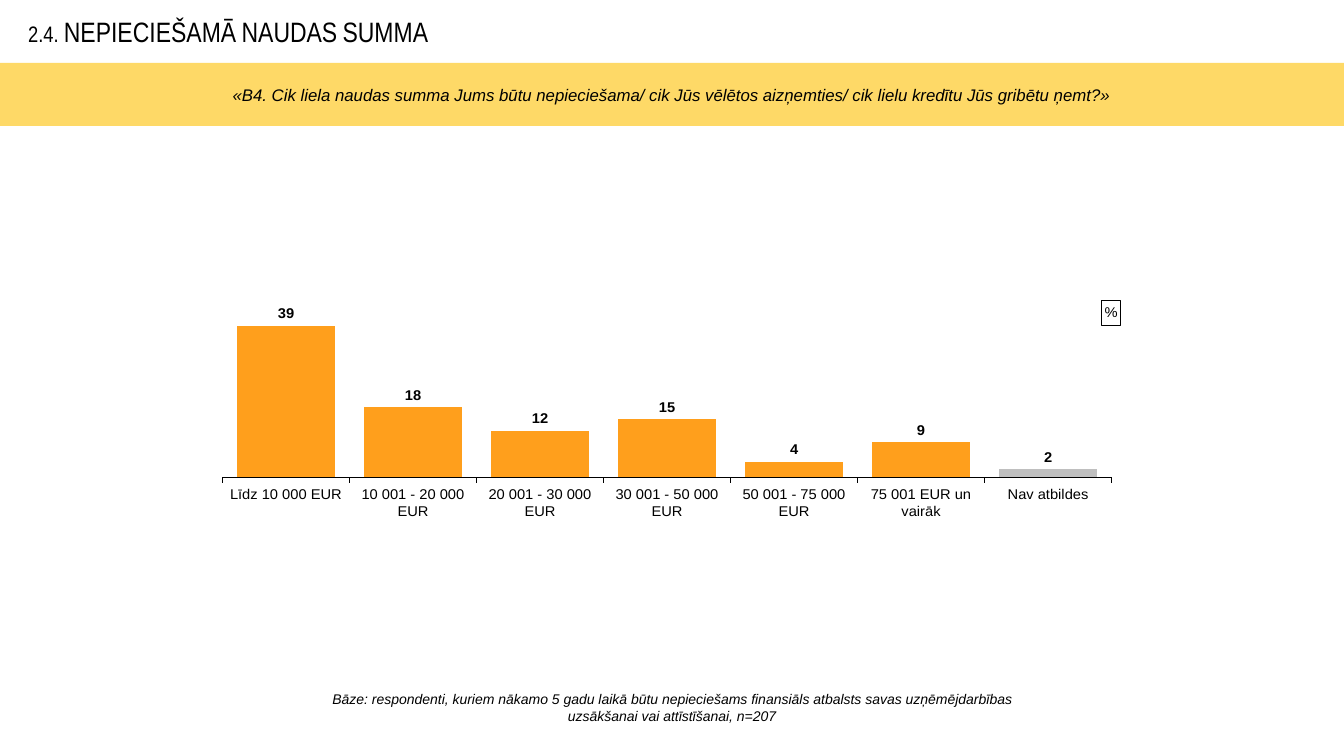
from dataclasses import dataclass

from lxml import etree
from pptx import Presentation
from pptx import util as u
from pptx.chart.data import CategoryChartData
from pptx.dml.color import RGBColor
from pptx.enum import chart as ch
from pptx.enum import shapes, text
from pptx.oxml import parse_xml
from pptx.oxml.ns import nsdecls

TITLE = "2.4. NEPIECIEŠAMĀ NAUDAS SUMMA"
ASK = ("«B4. Cik liela naudas summa Jums būtu nepieciešama/ cik Jūs vēlētos "
       "aizņemties/ cik lielu kredītu Jūs gribētu ņemt?»")
BASE = [
    "Bāze: respondenti, kuriem nākamo 5 gadu laikā būtu nepieciešams "
    "finansiāls atbalsts savas uzņēmējdarbības",
    "uzsākšanai vai attīstīšanai, n=207",
]
UNIT = "%"
SUMS = {
    "Līdz 10 000 EUR": 39,
    "10 001 - 20 000 EUR": 18,
    "20 001 - 30 000 EUR": 12,
    "30 001 - 50 000 EUR": 15,
    "50 001 - 75 000 EUR": 4,
    "75 001 EUR un vairāk": 9,
    "Nav atbildes": 2,
}


@dataclass(frozen=True)
class Theme:
    ink: str = "000000"
    band: str = "FED967"
    bar: str = "FF9F1C"
    none: str = "BFBFBF"
    face: str = "Arial"
    head: str = "Arial Narrow"
    title: float = 20
    ask: float = 12
    label: float = 10.5
    base: float = 10
    small: float = 9


T = Theme()
WIDE, HIGH = 13.33, 7.5
ROW = HIGH / 12
SIDE = WIDE / 8


def box(x, y, w, h):
    return [u.Inches(v) for v in (x, y, w, h)]


def style(font, size, face=T.face, bold=False, italic=False):
    font.size, font.name = u.Pt(size), face
    font.bold, font.italic = bold, italic
    font.color.rgb = RGBColor.from_string(T.ink)


def paint(fill, color):
    fill.solid()
    fill.fore_color.rgb = RGBColor.from_string(color)


def write(shape, lines, size, align, **look):
    frame = shape.text_frame
    frame.text = "\n".join(lines)
    frame.word_wrap = True
    frame.auto_size = text.MSO_AUTO_SIZE.NONE
    frame.vertical_anchor = text.MSO_ANCHOR.MIDDLE
    for para in frame.paragraphs:
        para.alignment = align
        style(para.font, size, **look)


def place(node, x, y, w=None, h=None):
    old = node.find("{*}layout")
    if old is not None:
        node.remove(old)
    spots = {"xMode": "edge", "yMode": "edge", "x": x, "y": y}
    if w:
        spots = {"layoutTarget": "inner", **spots, "w": w, "h": h}
    inner = "".join(f'<c:{k} val="{v}"/>' for k, v in spots.items())
    return parse_xml(f'<c:layout {nsdecls("c")}><c:manualLayout>{inner}'
                     "</c:manualLayout></c:layout>")


def draw_chart(slide):
    data = CategoryChartData(number_format="0")
    data.categories = list(SUMS)
    data.add_series("Series 1", list(SUMS.values()))
    chart = slide.shapes.add_chart(
        ch.XL_CHART_TYPE.COLUMN_CLUSTERED, *box(1.82, 2.96, 9.69, 2.19), data).chart
    style(chart.font, T.small)
    chart.has_legend = False

    chart.has_title = True
    title = chart.chart_title
    title.text_frame.text = UNIT
    style(title.text_frame.paragraphs[0].font, T.label)
    title.include_in_layout = False
    edge = title.format.line
    paint(edge.fill, T.ink)
    edge.width = u.Pt(0.75)
    node = title._element
    spot = place(node, 0.94, 0.01)
    node.find("{*}tx").addnext(spot)

    area = chart._chartSpace.chart.plotArea
    area.insert(0, place(area, 0.04, 0.02, 0.91, 0.82))

    cats, vals = chart.category_axis, chart.value_axis
    cats.major_tick_mark = ch.XL_TICK_MARK.OUTSIDE
    style(cats.tick_labels.font, T.label)
    paint(cats.format.line.fill, T.ink)
    cats.format.line.width = u.Pt(0.25)
    vals.minimum_scale, vals.maximum_scale = 0, 45
    vals.has_major_gridlines = False
    vals.visible = False

    plot = chart.plots[0]
    plot.gap_width = 30
    plot.vary_by_categories = False
    bars = plot.series[0]
    paint(bars.format.fill, T.bar)
    paint(bars.points[len(SUMS) - 1].format.fill, T.none)
    marks = bars.data_labels
    marks.show_value = True
    marks.position = ch.XL_LABEL_POSITION.OUTSIDE_END
    marks.number_format, marks.number_format_is_linked = "0", False
    style(marks.font, T.label, bold=True)


def main():
    deck = Presentation()
    deck.slide_width, deck.slide_height = u.Inches(WIDE), u.Inches(HIGH)
    slide = deck.slides.add_slide(deck.slide_layouts[5])
    mid = text.PP_ALIGN.CENTER

    head = slide.shapes.title
    head.left, head.top, head.width, head.height = box(0.18, 0, 10, ROW)
    write(head, [TITLE], T.title, text.PP_ALIGN.LEFT, face=T.head)
    for run in head.text_frame.paragraphs[0].runs:
        run.font._element.set("cap", "small")

    draw_chart(slide)

    band = slide.shapes.add_shape(shapes.MSO_SHAPE.RECTANGLE, *box(0, ROW, WIDE, ROW))
    band.shadow.inherit = False
    paint(band.fill, T.band)
    band.line.fill.background()
    write(band, [ASK], T.ask, mid, italic=True)

    foot = slide.shapes.add_textbox(*box(SIDE, 6.78, WIDE - 2 * SIDE, 0.47))
    write(foot, BASE, T.base, mid, italic=True)

    deck.save("out.pptx")


if __name__ == "__main__":
    main()
